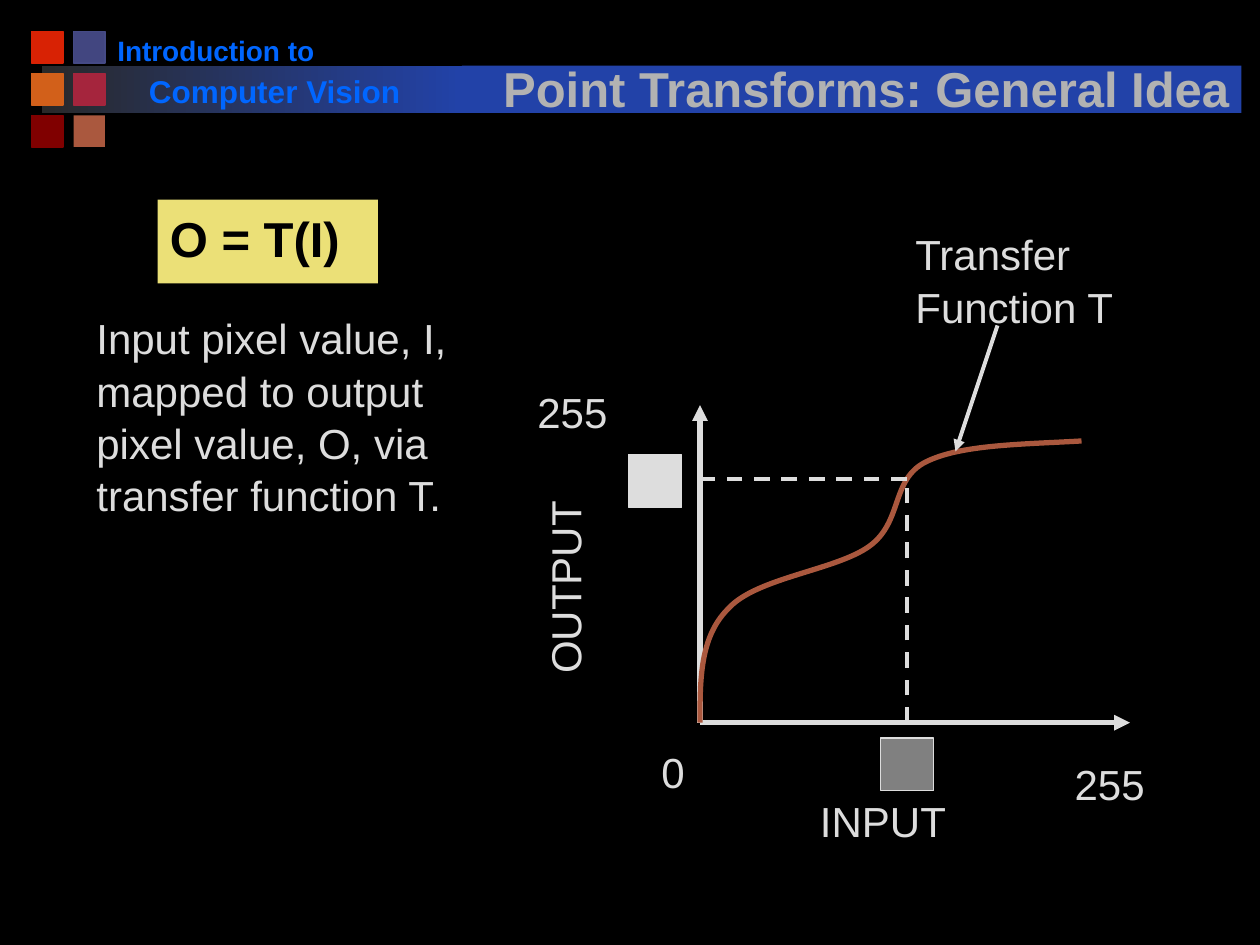
from lxml.etree import SubElement
from pptx import Presentation
from pptx.dml.color import RGBColor
from pptx.enum.dml import MSO_LINE_DASH_STYLE as Dash
from pptx.enum.shapes import MSO_CONNECTOR as Connector, MSO_SHAPE as Shape
from pptx.enum.text import MSO_ANCHOR as Anchor, PP_ALIGN as Align
from pptx.oxml import parse_xml
from pptx.oxml.ns import nsdecls, qn
from pptx.util import Pt

LIGHT = "DDDDDD"
BLUE = "2242A8"
LINK = "0066FF"
RUST = "AA583E"


def color(code):
    return RGBColor.from_string(code)


class Board:
    font = "Arial"
    size = 24
    spacing = 1.04

    def __init__(self, slide):
        self.slide = slide
        self.shapes = slide.shapes
        slide.background.fill.solid()
        slide.background.fill.fore_color.rgb = color("000000")

    def box(self, left, top, width, height, fill, line=None, weight=1):
        rect = self.shapes.add_shape(
            Shape.RECTANGLE, Pt(left), Pt(top), Pt(width), Pt(height))
        rect.shadow.inherit = False
        rect.fill.solid()
        rect.fill.fore_color.rgb = color(fill)
        if line:
            rect.line.color.rgb = color(line)
            rect.line.width = Pt(weight)
        else:
            rect.line.fill.background()
        return rect

    def fade(self, left, top, width, height, start, end):
        band = self.box(left, top, width, height, end)
        band.fill.gradient()
        band.fill.gradient_angle = 0
        for stop, position, code in zip(band.fill.gradient_stops, (0, 1), (start, end)):
            stop.position = position
            stop.color.rgb = color(code)

    def text(self, left, top, width, height, *lines, size=None, code=LIGHT,
             bold=False, wrap=False, align=Align.LEFT, anchor=Anchor.TOP,
             rotation=0, shadow=False, before=0):
        label = self.shapes.add_textbox(Pt(left), Pt(top), Pt(width), Pt(height))
        label.rotation = rotation
        frame = label.text_frame
        frame.word_wrap = wrap
        frame.vertical_anchor = anchor
        for index, line in enumerate(lines):
            paragraph = frame.add_paragraph() if index else frame.paragraphs[0]
            paragraph.alignment = align
            paragraph.line_spacing = self.spacing
            paragraph.space_before = Pt(before)
            run = paragraph.add_run()
            run.text = line
            run.font.name = self.font
            run.font.size = Pt(size or self.size)
            run.font.bold = bold
            run.font.color.rgb = color(code)
            if shadow:
                run.font._element.find(qn("a:solidFill")).addnext(parse_xml(
                    f'<a:effectLst {nsdecls("a")}>'
                    '<a:outerShdw dist="35921" dir="2700000">'
                    '<a:srgbClr val="000000"/></a:outerShdw></a:effectLst>'))

    def line(self, start, end, weight, dashed=False, arrow=False):
        stroke = self.shapes.add_connector(
            Connector.STRAIGHT, *(Pt(value) for value in (*start, *end)))
        stroke.line.color.rgb = color(LIGHT)
        stroke.line.width = Pt(weight)
        if dashed:
            stroke.line.dash_style = Dash.DASH
        if arrow:
            SubElement(stroke.line._get_or_add_ln(), qn("a:tailEnd"), type="triangle")
        SubElement(stroke._element.spPr, qn("a:effectLst"))

    def curve(self, start, knots, code, weight):
        builder = self.shapes.build_freeform(*start, scale=Pt(1))
        builder.add_line_segments(knots, close=False)
        bend = builder.convert_to_shape()
        bend.shadow.inherit = False
        bend.fill.background()
        bend.line.color.rgb = color(code)
        bend.line.width = Pt(weight)
        segments = list(bend._element.iter(qn("a:lnTo")))
        outline = segments[0].getparent()
        for first in range(0, len(segments), 3):
            cubic = SubElement(outline, qn("a:cubicBezTo"))
            for segment in segments[first:first + 3]:
                cubic.append(segment[0])
                outline.remove(segment)


def draw_header(board):
    board.fade(24, 37.5, 240, 27, "292929", BLUE)
    tile, step = 18, 24
    tiles = [
        [("D82204", "D82204"), ("424680", "454A85")],
        [("D2601A", "D2601A"), ("A5253D", "A5253D")],
        [("800000", "800000"), (RUST, None)],
    ]
    for row, pair in enumerate(tiles):
        for column, (fill, edge) in enumerate(pair):
            board.box(18 + column * step, 18 + row * step, tile, tile, fill, edge)
    board.text(60, 15, 127.5, 26.6, "Introduction to", size=16, code=LINK, bold=True)
    board.text(78, 36.7, 182, 28.8, "Computer Vision", size=18, code=LINK,
               bold=True, wrap=True)
    board.box(264, 37.5, 445.5, 27, BLUE)
    board.text(264, 22.5, 462, 48, "Point Transforms: General Idea", size=28,
               code="B2B2B2", bold=True, wrap=True, align=Align.CENTER,
               anchor=Anchor.BOTTOM, shadow=True)


def draw_formula(board):
    board.box(90, 114, 126, 48, "EBE077")
    board.text(90, 114, 126, 48, "O = T(I)", size=28, code="000000",
               bold=True, wrap=True, before=2)
    board.text(48, 174, 240, 122.4,
               "Input pixel value, I, mapped to output pixel value, O, "
               "via transfer function T.", wrap=True)


def draw_graph(board):
    origin = (400, 413)
    input_x, output_y = 518.2, 273.5
    mapped = (input_x, output_y)
    board.line(origin, (400, 231.5), 3, arrow=True)
    board.line(origin, (645.7, 413), 3, arrow=True)
    board.curve(origin, [
        (400, 388.5), (400, 364), (416, 347.5),
        (432, 330.5), (478, 326), (497, 312),
        (515.5, 298), (509, 274.5), (529, 264),
        (549, 254), (583.5, 253.5), (618.2, 252.5),
    ], RUST, 3)
    board.text(370.8, 422, 28, 36, "0")
    board.text(607, 429, 54.7, 36, "255")
    board.text(300, 216, 54.7, 36, "255")
    board.text(461.5, 450, 86.4, 36, "INPUT")
    board.text(265, 317.5, 113, 36, "OUTPUT", rotation=270)
    board.line((input_x, origin[1]), mapped, 2.25, dashed=True)
    board.line(mapped, (origin[0], output_y), 2.25, dashed=True)
    board.box(503.3, 421.7, 30.2, 30.2, "808080", LIGHT, 0.75)
    board.box(359.3, 259.8, 30.2, 30.2, LIGHT, LIGHT, 0.75)
    board.text(516, 126, 128.2, 64.8, "Transfer", "Function T")
    board.line((570, 186), (546, 258), 2.25, arrow=True)


def main():
    deck = Presentation()
    deck.slide_width, deck.slide_height = Pt(720), Pt(540)
    board = Board(deck.slides.add_slide(deck.slide_layouts[6]))
    draw_header(board)
    draw_formula(board)
    draw_graph(board)
    deck.save("out.pptx")


if __name__ == "__main__":
    main()
